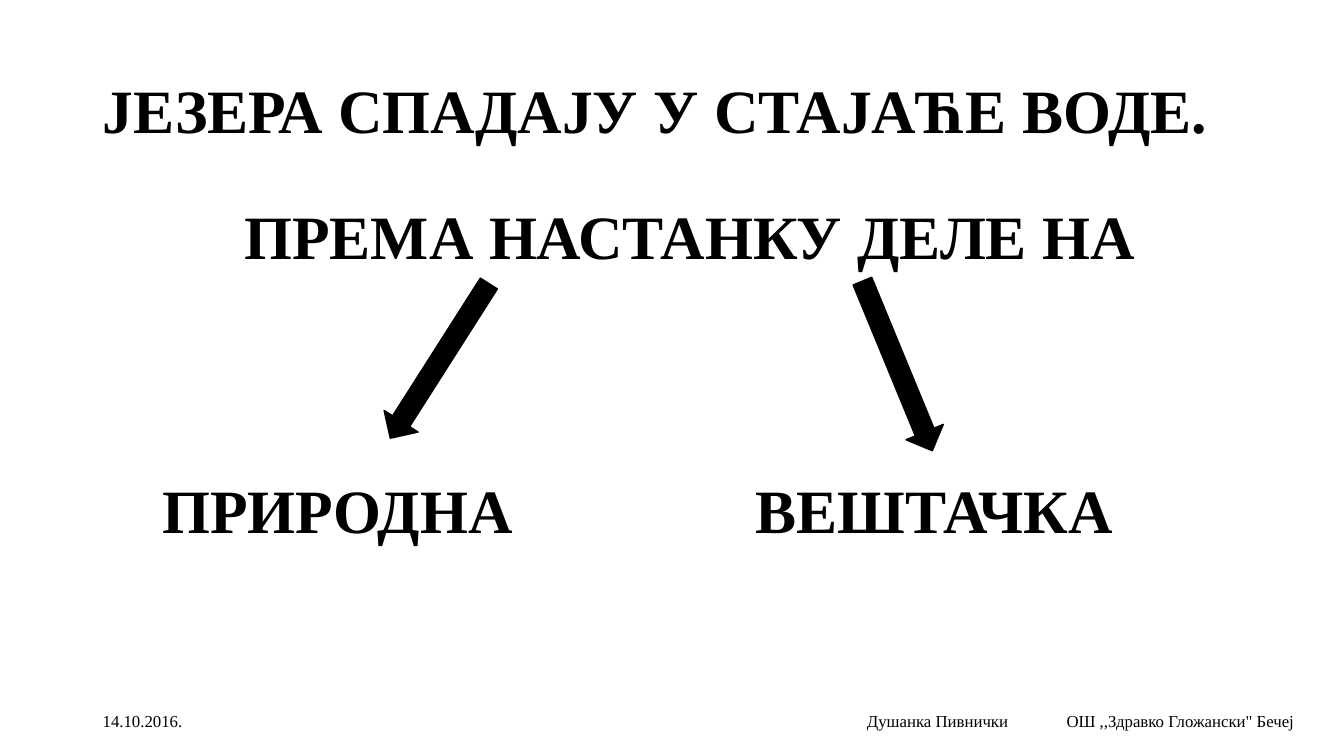
from dataclasses import dataclass

from lxml.etree import SubElement
from pptx import Presentation
from pptx.dml.color import RGBColor
from pptx.enum.shapes import MSO_SHAPE as SHAPE
from pptx.enum.text import MSO_ANCHOR as ANCHOR, PP_ALIGN as ALIGN
from pptx.oxml.ns import qn
from pptx.util import Inches, Pt


@dataclass(frozen=True)
class Theme:
    font: str = "Times New Roman"
    ink: RGBColor = RGBColor(0, 0, 0)
    paper: RGBColor = RGBColor(255, 255, 255)
    heading: int = 44
    footer: int = 12


class LakeSlide:
    def __init__(self, prs, theme):
        self.theme = theme
        self.s = prs.slides.add_slide(prs.slide_layouts[6])
        fill = self.s.background.fill
        fill.solid()
        fill.fore_color.rgb = theme.paper

    def text(self, box, text, size, bold=False, align=ALIGN.LEFT,
             anchor=ANCHOR.TOP, spacing=1.0, tab=None):
        tf = self.s.shapes.add_textbox(*map(Inches, box)).text_frame
        tf.word_wrap = True
        tf.vertical_anchor = anchor
        p = tf.paragraphs[0]
        p.alignment = align
        p.line_spacing = spacing
        if tab:
            tabs = SubElement(p._p.get_or_add_pPr(), qn("a:tabLst"))
            SubElement(tabs, qn("a:tab"), pos=str(Inches(tab)), algn="l")
        r = p.add_run()
        r.text = text
        for name, value in {"name": self.theme.font, "size": Pt(size), "bold": bold}.items():
            setattr(r.font, name, value)
        r.font.color.rgb = self.theme.ink

    def heading(self, box, text, **fmt):
        self.text(box, text, self.theme.heading, bold=True, spacing=0.9, **fmt)

    def footer(self, box, text, **fmt):
        self.text(box, text, self.theme.footer, anchor=ANCHOR.MIDDLE, **fmt)

    def arrow(self, left, top, rotation):
        sp = self.s.shapes.add_shape(
            SHAPE.DOWN_ARROW, Inches(left), Inches(top), Inches(0.4), Inches(1.82))
        sp.rotation = rotation
        sp.shadow.inherit = False
        sp.fill.solid()
        sp.fill.fore_color.rgb = self.theme.ink
        sp.line.color.rgb = self.theme.ink
        sp.line.width = Pt(1)


def main():
    prs = Presentation()
    prs.slide_width, prs.slide_height = Inches(13.33), Inches(7.5)
    slide = LakeSlide(prs, Theme())

    slide.heading((0.92, 0.4, 11.5, 1.45), "ЈЕЗЕРА СПАДАЈУ У СТАЈАЋЕ ВОДЕ.", anchor=ANCHOR.MIDDLE)
    slide.heading((0.42, 2, 12.85, 0.9), "ПРЕМА НАСТАНКУ ДЕЛЕ НА", align=ALIGN.CENTER)

    branches = [
        ("ПРИРОДНА", 1.26, (4.16, 2.67, 32.5)),
        ("ВЕШТАЧКА", 7.18, (8.7, 2.72, 337.6)),
    ]
    for label, left, arrow in branches:
        slide.arrow(*arrow)
        slide.heading((left, 4.72, 4.18, 0.9), label, align=ALIGN.CENTER)

    slide.footer((0.92, 6.95, 3, 0.4), "14.10.2016.")
    slide.footer((8.5, 6.95, 4.5, 0.4),
                 "Душанка Пивнички\tОШ ,,Здравко Гложански\" Бечеј", tab=1.98)

    prs.save("out.pptx")


if __name__ == "__main__":
    main()
